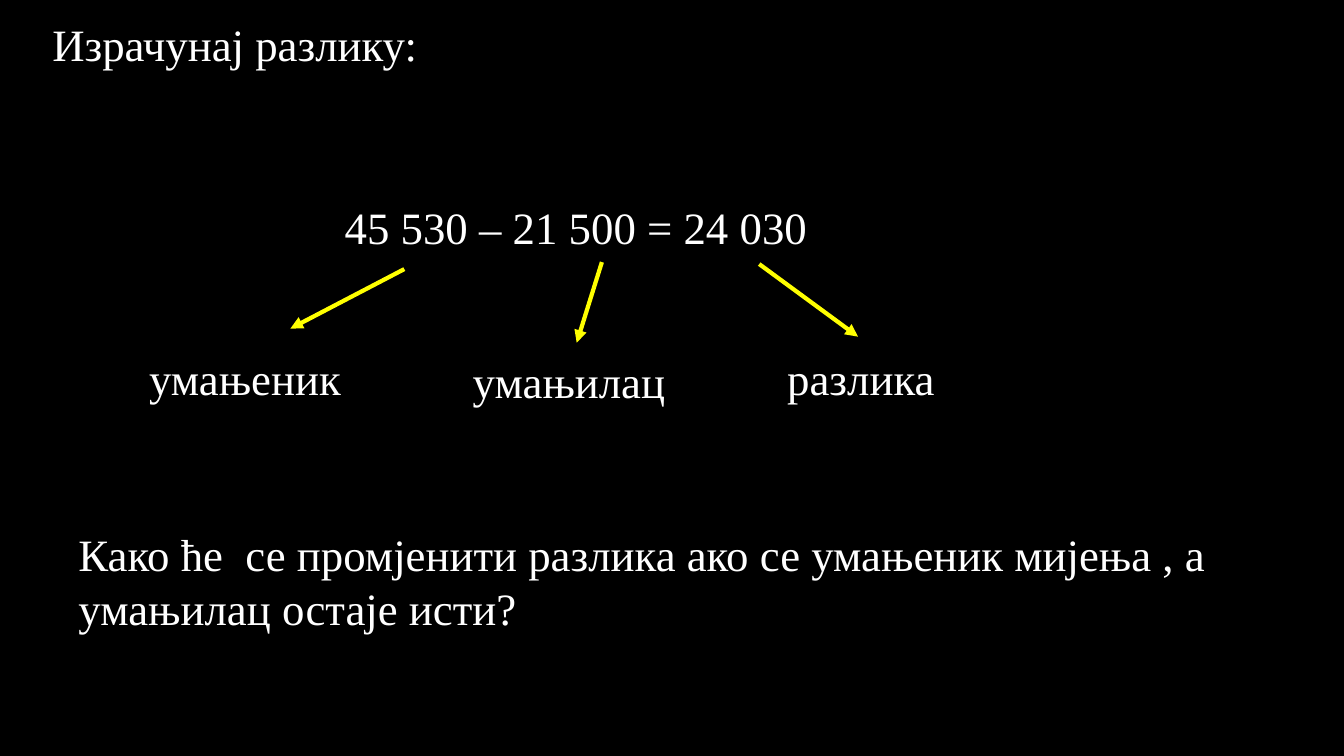
from pptx import Presentation
from pptx.dml.color import RGBColor
from pptx.enum.shapes import MSO_CONNECTOR
from pptx.enum.text import MSO_AUTO_SIZE
from pptx.oxml.ns import qn
from pptx.util import Inches, Pt
from lxml import etree


def paint(fill, color):
    fill.solid()
    fill.fore_color.rgb = RGBColor.from_string(color)


deck = Presentation()
deck.slide_width = Inches(13.33)
deck.slide_height = Inches(7.5)
slide = deck.slides.add_slide(deck.slide_layouts[6])
paint(slide.background.fill, "000000")

texts = [
    ("45 530 – 21 500 = 24 030", 3.32, 1.99, 6.44, 0.59, 0.9),
    ("Како ће  се промјенити разлика ако се умањеник мијења , а умањилац остаје исти?",
     0.68, 5.18, 11.73, 1.18, 1),
    ("умањилац", 4.59, 3.46, 3.15, 0.64, 1),
    ("Израчунај разлику:", 0.42, 0.12, 4.38, 0.64, 1),
    ("умањеник", 1.38, 3.43, 2.45, 0.64, 1),
    ("разлика", 7.71, 3.43, 3.23, 0.64, 1),
]
for words, left, top, width, height, space in texts:
    box = slide.shapes.add_textbox(Inches(left), Inches(top), Inches(width), Inches(height))
    frame = box.text_frame
    frame.word_wrap = True
    frame.auto_size = MSO_AUTO_SIZE.SHAPE_TO_FIT_TEXT
    line = frame.paragraphs[0]
    line.text = words
    line.line_spacing = space
    line.font.name = "Times New Roman"
    line.font.size = Pt(32)
    paint(line.font.fill, "FFFFFF")

arrows = [
    (4.01, 2.67, 2.88, 3.26),
    (5.97, 2.6, 5.72, 3.4),
    (7.53, 2.62, 8.51, 3.34),
]
for ends in arrows:
    arrow = slide.shapes.add_connector(MSO_CONNECTOR.STRAIGHT, *map(Inches, ends))
    arrow.line.width = Pt(3)
    paint(arrow.line.fill, "FFFF00")
    etree.SubElement(arrow.line._get_or_add_ln(), qn("a:tailEnd"), type="triangle")
    etree.SubElement(arrow._element.spPr, qn("a:effectLst"))

deck.save("out.pptx")
